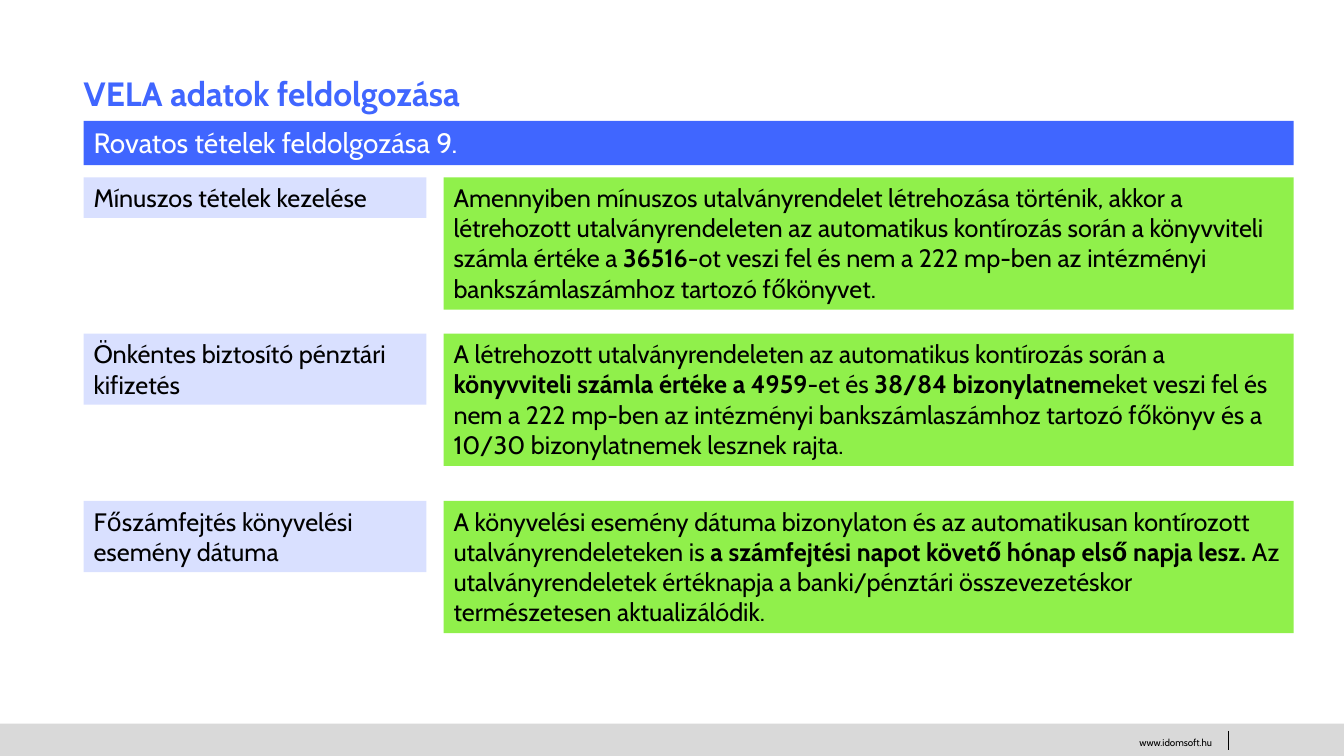
from pptx import Presentation
from pptx.dml.color import RGBColor
from pptx.enum.shapes import MSO_CONNECTOR, MSO_SHAPE
from pptx.enum.text import MSO_ANCHOR, MSO_AUTO_SIZE, PP_ALIGN
from pptx.oxml.ns import qn
from pptx.util import Inches, Pt

FONT = "Cabin"
BLACK = RGBColor(0x00, 0x00, 0x00)
WHITE = RGBColor(0xFF, 0xFF, 0xFF)
BLUE = RGBColor(0x40, 0x66, 0xFF)
PALE = RGBColor(0xD9, 0xE0, 0xFF)
GREEN = RGBColor(0x90, 0xF0, 0x4B)
GREY = RGBColor(0xD9, 0xD9, 0xD9)

WIDTH, HEIGHT = 13.33, 7.5
LEFT, RIGHT = 0.83, 12.83
TERM_W = 3.4
NOTE_X = 4.4
PAD, LINE_H = 0.1, 0.303
FOOT_Y = 7.18

# Top, term, lines in the term, pieces of the note: plain and bold by turns
ROWS = [
    (1.76, "Mínuszos tételek kezelése", 1, [
        "Amennyiben mínuszos utalványrendelet létrehozása történik, akkor a "
        "létrehozott utalványrendeleten az automatikus kontírozás során a "
        "könyvviteli számla értéke a ",
        "36516",
        "-ot veszi fel és nem a 222 mp-ben az intézményi bankszámlaszámhoz "
        "tartozó főkönyvet."]),
    (3.31, "Önkéntes biztosító pénztári kifizetés", 2, [
        "A létrehozott utalványrendeleten az automatikus kontírozás során a ",
        "könyvviteli számla értéke a 4959",
        "-et és ",
        "38/84 bizonylatnem",
        "eket veszi fel és nem a 222 mp-ben az intézményi bankszámlaszámhoz "
        "tartozó főkönyv és a 10/30 bizonylatnemek lesznek rajta."]),
    (4.97, "Főszámfejtés könyvelési esemény dátuma", 2, [
        "A könyvelési esemény dátuma bizonylaton és az automatikusan "
        "kontírozott utalványrendeleteken is ",
        "a számfejtési napot követő hónap első napja lesz.",
        " Az utalványrendeletek értéknapja a banki/pénztári összevezetéskor "
        "természetesen aktualizálódik."]),
]
NOTE_LINES = 4


def style(run, size, color, bold=False):
    font = run.font
    font.name, font.size, font.bold = FONT, Pt(size), bold
    font.color.rgb = color


def write(shape, pieces, size, color, align=PP_ALIGN.LEFT):
    """Fill a shape with text; every second piece is bold."""
    frame = shape.text_frame
    frame.word_wrap = True
    frame.auto_size = MSO_AUTO_SIZE.NONE
    frame.vertical_anchor = MSO_ANCHOR.TOP
    para = frame.paragraphs[0]
    para.alignment = align
    for i, piece in enumerate(pieces):
        run = para.add_run()
        run.text = piece
        style(run, size, color, bold=i % 2 == 1)


def add_bar(slide, x, y, w, h, fill):
    bar = slide.shapes.add_shape(
        MSO_SHAPE.RECTANGLE, Inches(x), Inches(y), Inches(w), Inches(h))
    bar.shadow.inherit = False
    bar.fill.solid()
    bar.fill.fore_color.rgb = fill
    bar.line.fill.background()
    return bar


def add_box(slide, x, y, w, lines, fill, pieces):
    """Add a filled box as high as its lines of text."""
    box = add_bar(slide, x, y, w, PAD + lines * LINE_H, fill)
    write(box, pieces, 18, BLACK)


def add_title(slide, text):
    title = slide.shapes.title
    title.left, title.top = Inches(0.73), Inches(0.67)
    title.width, title.height = Inches(6.36), Inches(0.5)
    frame = title.text_frame
    frame.text = text
    frame.auto_size = MSO_AUTO_SIZE.NONE
    frame.vertical_anchor = MSO_ANCHOR.TOP
    para = frame.paragraphs[0]
    para.alignment = PP_ALIGN.LEFT
    para.line_spacing = 1.0
    style(para.runs[0], 24, BLUE, bold=True)


def add_foot(slide):
    add_bar(slide, 0, FOOT_Y, WIDTH, HEIGHT - FOOT_Y, GREY)
    site = slide.shapes.add_textbox(
        Inches(10.75), Inches(7.26), Inches(1.37), Inches(0.22))
    write(site, ["www.idomsoft.hu"], 7, BLACK, PP_ALIGN.RIGHT)
    rule = slide.shapes.add_connector(
        MSO_CONNECTOR.STRAIGHT,
        Inches(12.18), Inches(7.25), Inches(12.18), Inches(7.44))
    rule.line.color.rgb = BLACK
    rule.line.width = Pt(0.75)
    props = rule._element.spPr
    props.append(props.makeelement(qn("a:effectLst"), {}))


def main():
    deck = Presentation()
    deck.slide_width, deck.slide_height = Inches(WIDTH), Inches(HEIGHT)
    slide = deck.slides.add_slide(deck.slide_layouts[5])
    add_foot(slide)
    add_title(slide, "VELA adatok feldolgozása")
    band = add_bar(slide, LEFT, 1.2, RIGHT - LEFT, 0.44, BLUE)
    write(band, ["Rovatos tételek feldolgozása 9."], 20, WHITE)
    for top, term, lines, note in ROWS:
        add_box(slide, LEFT, top, TERM_W, lines, PALE, [term])
        add_box(slide, NOTE_X, top, RIGHT - NOTE_X, NOTE_LINES, GREEN, note)
    deck.save("out.pptx")


if __name__ == "__main__":
    main()
